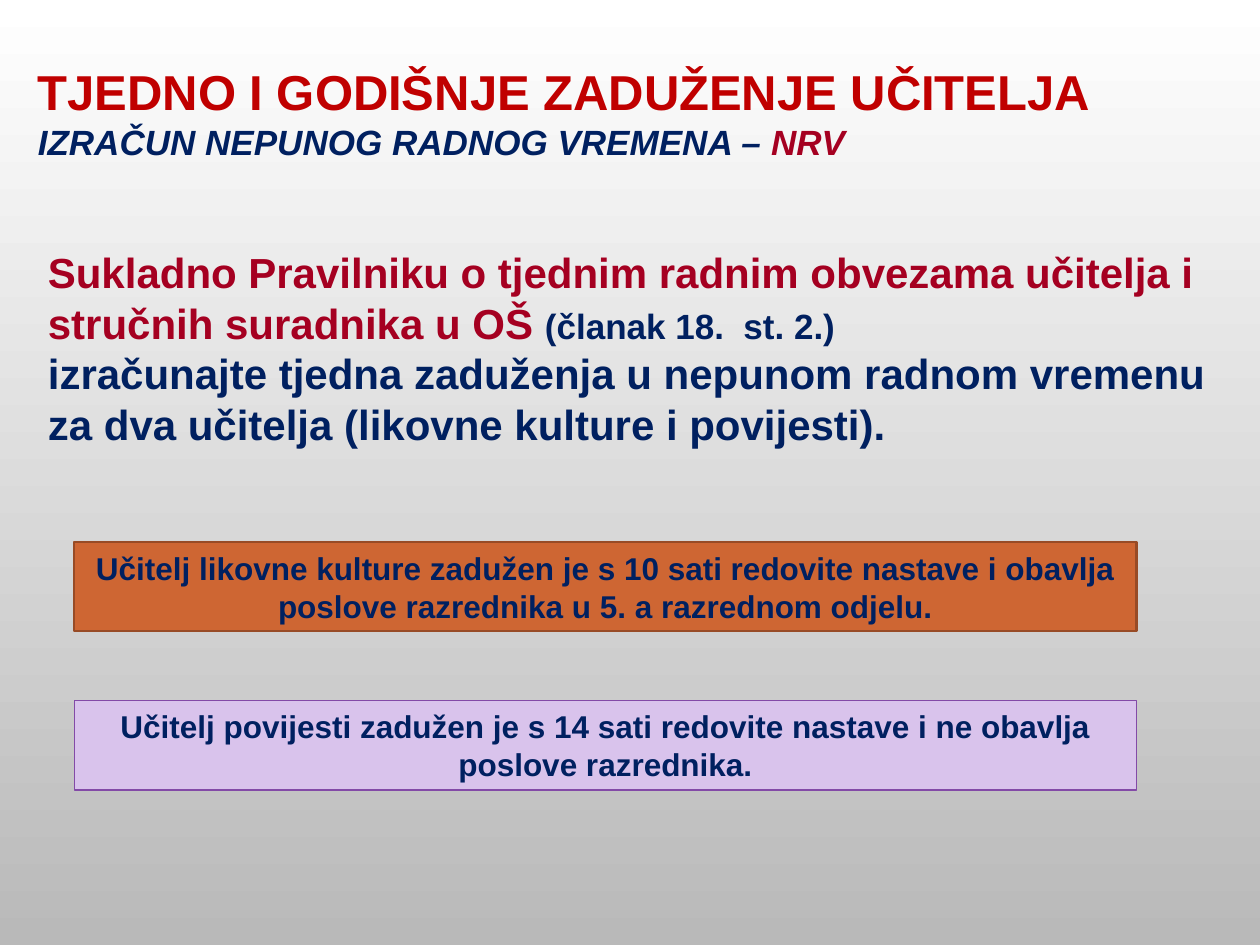
"""Builds the slide on part-time workload calculation for teachers."""
from dataclasses import dataclass
from typing import Any

from lxml import etree
from pptx import Presentation
from pptx import util as u
from pptx.dml.color import RGBColor
from pptx.enum import shapes, text
from pptx.oxml.ns import qn

COLORS = {
    "white": "FFFFFF", "gray": "B9B9B9", "red": "C00000", "crimson": "A50021",
    "navy": "002060", "orange": "CE6633", "brown": "984B26",
    "lilac": "D9C3EC", "purple": "834AA7",
}


def rgb(name):
    """Return the named palette colour."""
    return RGBColor.from_string(COLORS[name])


@dataclass
class Deck:
    """Holds the text style and the current slide."""
    slide: Any
    font: str = "Arial"

    def background(self, top, bottom):
        """Fill the background with a vertical gradient."""
        fill = self.slide.background.fill
        fill.gradient()
        fill.gradient_angle = 270
        for stop, name, position in zip(fill.gradient_stops, (top, bottom), (0, 1)):
            stop.color.rgb = rgb(name)
            stop.position = position

    def add_text(self, frame, paragraphs, align, anchor):
        """Add paragraphs made of (text, size, colour, italic) runs."""
        frame.word_wrap = True
        frame.auto_size = text.MSO_AUTO_SIZE.NONE
        frame.vertical_anchor = anchor
        for index, runs in enumerate(paragraphs):
            paragraph = frame.add_paragraph() if index else frame.paragraphs[0]
            paragraph.alignment = align
            paragraph.space_before = u.Pt(0)
            properties = paragraph._p.get_or_add_pPr()
            properties.set("marL", "0")
            properties.set("indent", "0")
            etree.SubElement(properties, qn("a:buNone"))
            for words, size, color, italic in runs:
                run = paragraph.add_run()
                run.text = words
                run.font.name = self.font
                run.font.size = u.Pt(size)
                run.font.bold = True
                run.font.italic = italic
                run.font.color.rgb = rgb(color)

    def placeholder(self, index, box, paragraphs):
        """Place and fill a template placeholder."""
        holder = self.slide.placeholders[index]
        holder.left, holder.top, holder.width, holder.height = map(u.Inches, box)
        self.add_text(holder.text_frame, paragraphs,
                      text.PP_ALIGN.LEFT, text.MSO_ANCHOR.TOP)

    def task(self, top, words, fill, line, weight):
        """Draw a framed task statement."""
        panel = self.slide.shapes.add_shape(
            shapes.MSO_SHAPE.RECTANGLE,
            *map(u.Inches, (0.59, top, 8.43, 0.71)))
        panel.shadow.inherit = False
        panel.fill.solid()
        panel.fill.fore_color.rgb = rgb(fill)
        panel.line.color.rgb = rgb(line)
        panel.line.width = u.Pt(weight)
        self.add_text(panel.text_frame, [[(words, 18, "navy", False)]],
                      text.PP_ALIGN.CENTER, text.MSO_ANCHOR.MIDDLE)


def main():
    """Build and save the slide."""
    presentation = Presentation()
    presentation.slide_width = u.Inches(10)
    presentation.slide_height = u.Inches(7.5)
    deck = Deck(presentation.slides.add_slide(presentation.slide_layouts[1]))
    deck.background("white", "gray")
    deck.placeholder(0, (0.2, 0.44, 8.58, 0.91), [
        [("TJEDNO I GODIŠNJE ZADUŽENJE UČITELJA", 28, "red", False)],
        [("IZRAČUN NEPUNOG RADNOG VREMENA – ", 20, "navy", True),
         ("NRV", 20, "crimson", True)],
    ])
    deck.placeholder(1, (0.28, 1.91, 9.45, 1.76), [
        [("Sukladno Pravilniku o tjednim radnim obvezama učitelja i "
          "stručnih suradnika u OŠ ", 24, "crimson", False),
         ("(članak 18.  st. 2.)", 20, "navy", False)],
        [("izračunajte tjedna zaduženja u nepunom radnom vremenu "
          "za dva učitelja (likovne kulture i povijesti).", 24, "navy", False)],
    ])
    deck.task(4.3, "Učitelj likovne kulture zadužen je s 10 sati redovite nastave "
              "i obavlja poslove razrednika u 5. a razrednom odjelu.",
              "orange", "brown", 1.25)
    deck.task(5.56, "Učitelj povijesti zadužen je s 14 sati redovite nastave "
              "i ne obavlja poslove razrednika.", "lilac", "purple", 0.75)
    presentation.save("out.pptx")


if __name__ == "__main__":
    main()
